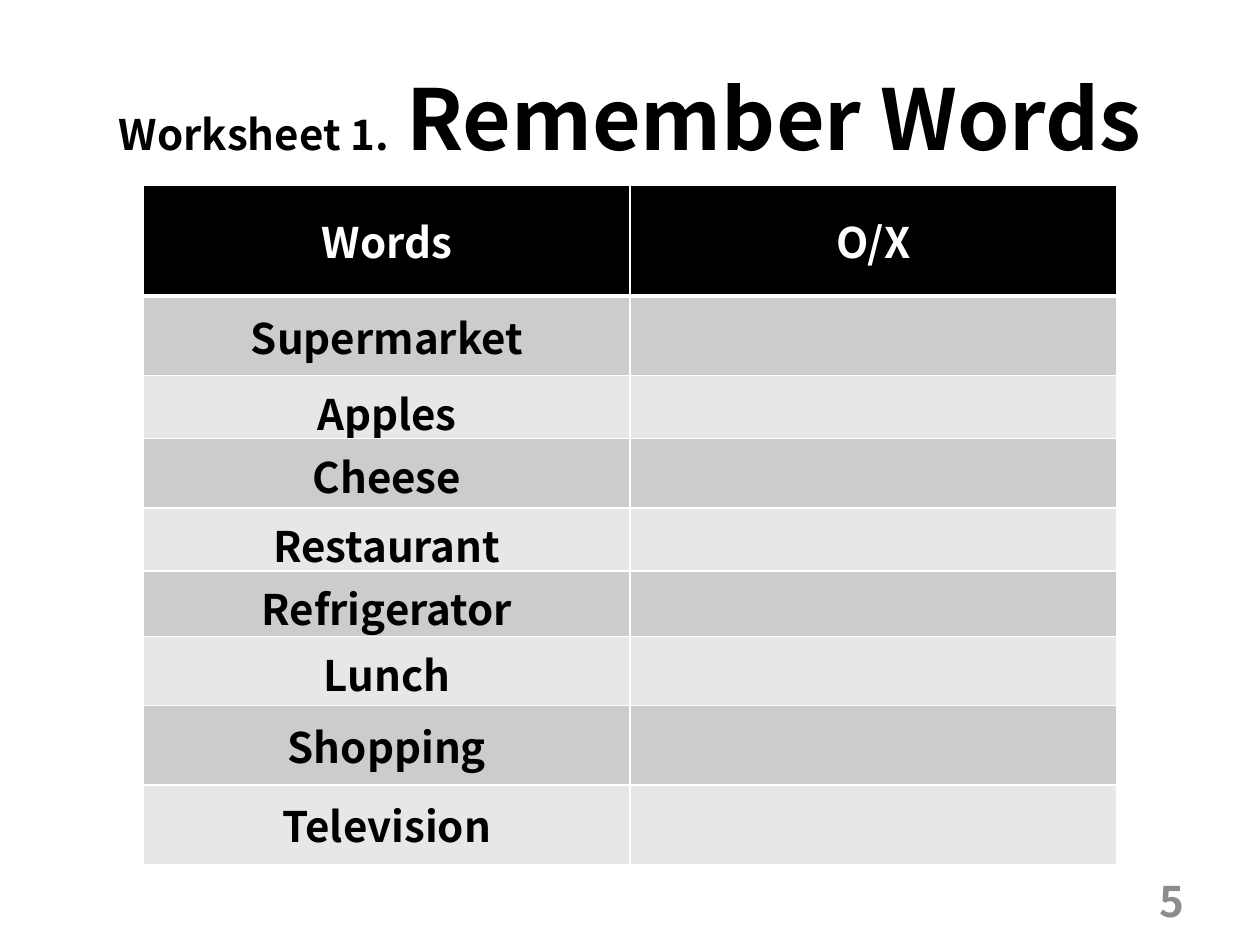
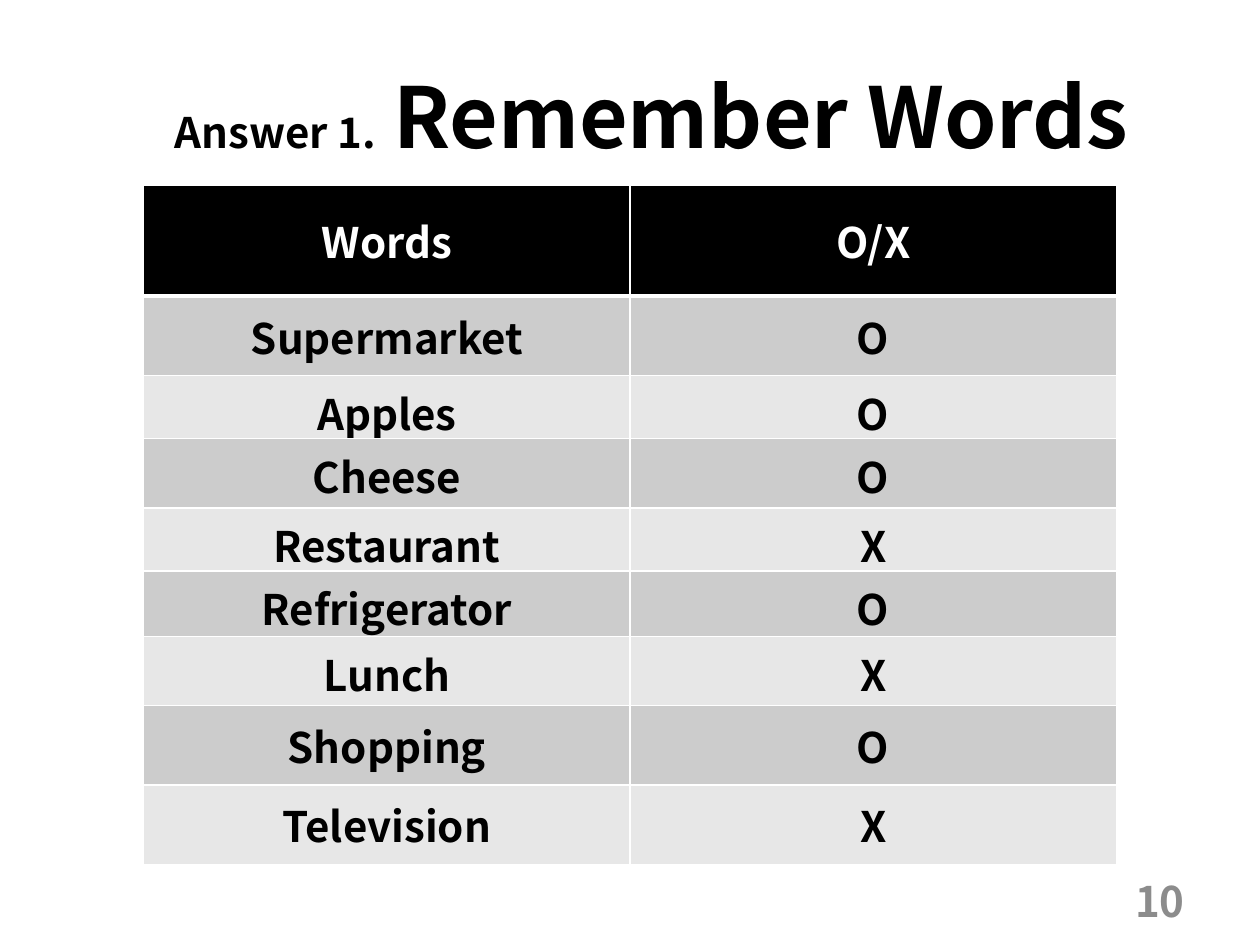
from dataclasses import dataclass

from lxml import etree
from pptx import Presentation
from pptx.dml.color import RGBColor
from pptx.enum.text import MSO_ANCHOR, PP_ALIGN
from pptx.oxml.ns import qn
from pptx.util import Inches, Pt

MID = MSO_ANCHOR.MIDDLE
CENTER, RIGHT = PP_ALIGN.CENTER, PP_ALIGN.RIGHT
TITLE_ONLY = 5


@dataclass(frozen=True)
class Theme:
    """Colours, font and type sizes shared by the slides."""
    font: str = "Noto Sans CJK KR"
    ink: str = "000000"
    paper: str = "FFFFFF"
    dark: str = "CCCCCC"
    light: str = "E7E7E7"
    muted: str = "8C8C8C"
    text: int = 24
    gap: int = 44
    head: int = 48
    thin: int = 1
    thick: int = 3


THEME = Theme()
WORDS = ["Supermarket", "Apples", "Cheese", "Restaurant",
         "Refrigerator", "Lunch", "Shopping", "Television"]
ROWS = [0.88, 0.63, 0.46, 0.55, 0.39, 0.52, 0.55, 0.63, 0.63]
GRID = (1.14, 1.47, 7.72, 5.39)
PAGE = (7.17, 6.95, 2.33, 0.4)
SHEETS = [
    ("Worksheet 1.", (0.5, 0.3, 9, 1.25), "5", [""] * len(WORDS)),
    ("Answer 1.", (0.67, 0.29, 9, 1.25), "10", list("OOOXOXOX")),
]


def write(frame, runs, color, align):
    """Write (text, size) runs as one centred-height paragraph."""
    frame.vertical_anchor = MID
    para = frame.paragraphs[0]
    para.alignment = align
    for text, size in runs:
        run = para.add_run()
        run.text = text
        look = {"name": THEME.font, "size": Pt(size), "bold": True}
        for key, value in look.items():
            setattr(run.font, key, value)
        run.font.color.rgb = RGBColor.from_string(color)


def place(shape, box):
    """Move a shape to a box given in inches."""
    for key, value in zip(("left", "top", "width", "height"), box):
        setattr(shape, key, Inches(value))


def edge(cell, widths):
    """Draw the left, right, top and bottom borders of a cell."""
    props = cell._tc.get_or_add_tcPr()
    for side, width in zip("LRTB", widths):
        line = etree.SubElement(props, qn(f"a:ln{side}"), w=str(Pt(width)))
        fill = etree.SubElement(line, qn("a:solidFill"))
        etree.SubElement(fill, qn("a:srgbClr"), val=THEME.paper)


def add_title(slide, label, box):
    """Fill the title with a small label and a large heading."""
    title = slide.shapes.title
    place(title, box)
    runs = [(label, THEME.text), (" ", THEME.gap),
            ("Remember Words", THEME.head)]
    write(title.text_frame, runs, THEME.ink, CENTER)


def add_grid(slide, marks, box):
    """Add the table of words and marks."""
    data = [("Words", "O/X"), *zip(WORDS, marks)]
    frame = slide.shapes.add_table(len(data), 2, *map(Inches, box))
    table = frame.table
    for row, (pair, height) in enumerate(zip(data, ROWS)):
        table.rows[row].height = Inches(height)
        top = THEME.thick if row == 1 else THEME.thin
        base = THEME.thin if row else THEME.thick
        band = (THEME.dark if row % 2 else THEME.light) if row else THEME.ink
        for col, text in enumerate(pair):
            cell = table.cell(row, col)
            edge(cell, (THEME.thin, THEME.thin, top, base))
            cell.fill.solid()
            cell.fill.fore_color.rgb = RGBColor.from_string(band)
            cell.vertical_anchor = MID
            if text:
                color = THEME.ink if row else THEME.paper
                write(cell.text_frame, [(text, THEME.text)], color, CENTER)
    frame.height = Inches(box[3])


def add_page(slide, number, box):
    """Add the page number."""
    frame = slide.shapes.add_textbox(*map(Inches, box)).text_frame
    frame.word_wrap = True
    write(frame, [(number, THEME.text)], THEME.muted, RIGHT)


def add_sheet(deck, label, box, number, marks):
    """Add one sheet with title, page number and table."""
    slide = deck.slides.add_slide(deck.slide_layouts[TITLE_ONLY])
    add_title(slide, label, box)
    add_page(slide, number, PAGE)
    add_grid(slide, marks, GRID)


def main():
    """Build and save the deck."""
    deck = Presentation()
    deck.slide_width, deck.slide_height = Inches(10), Inches(7.5)
    for sheet in SHEETS:
        add_sheet(deck, *sheet)
    deck.save("out.pptx")


if __name__ == "__main__":
    main()
